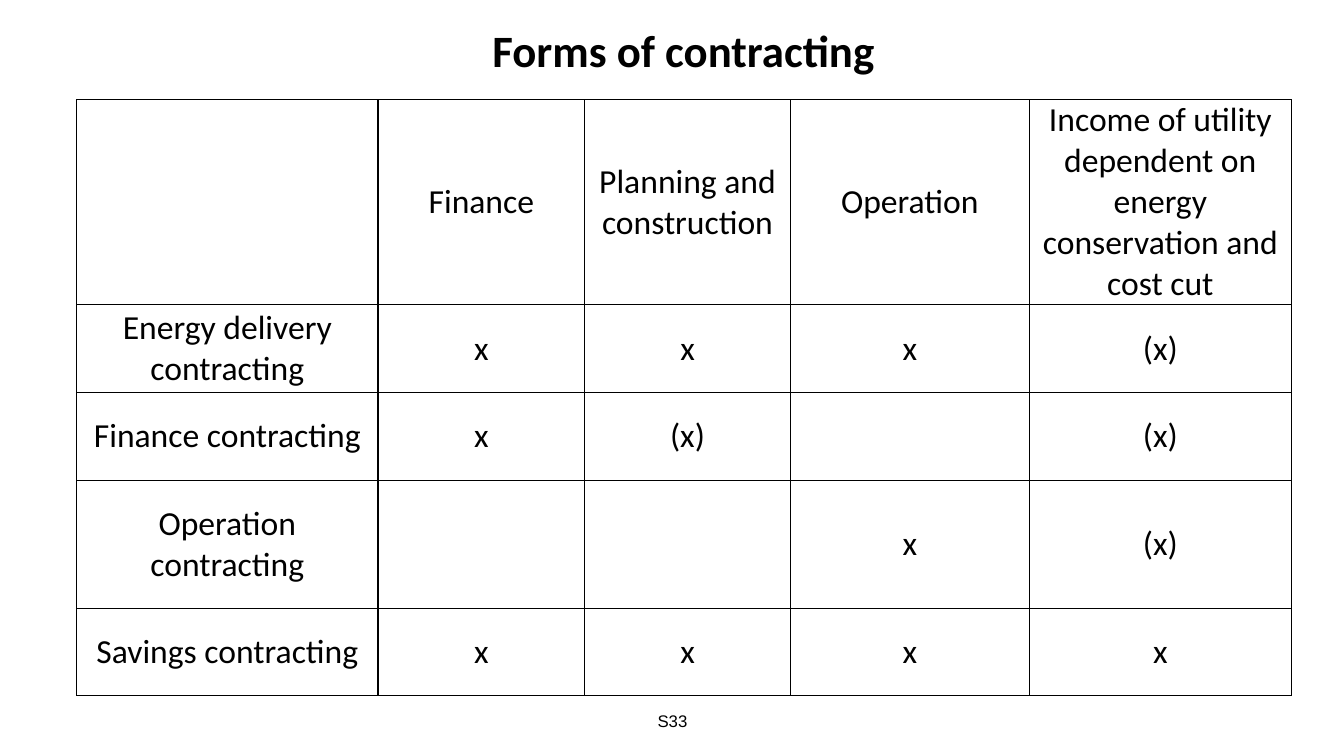
"""Build the slide that compares the forms of contracting in a table."""
from lxml import etree
from pptx import Presentation
from pptx.dml.color import RGBColor
from pptx.enum.text import MSO_ANCHOR, PP_ALIGN
from pptx.oxml.ns import qn
from pptx.util import Inches, Pt


def format_paragraph(paragraph, size, font_name, color="000000", bold=False):
    paragraph.alignment = PP_ALIGN.CENTER
    paragraph.font.size = Pt(size)
    paragraph.font.name = font_name
    paragraph.font.bold = bold
    paragraph.font.color.rgb = RGBColor.from_string(color)


def add_borders(cell, color="000000"):
    properties = cell._tc.get_or_add_tcPr()
    for position, side in enumerate(("a:lnL", "a:lnR", "a:lnT", "a:lnB")):
        line = etree.Element(qn(side), w=str(Pt(1)))
        fill = etree.SubElement(line, qn("a:solidFill"))
        etree.SubElement(fill, qn("a:srgbClr"), val=color)
        properties.insert(position, line)


presentation = Presentation()
presentation.slide_width = Inches(13.33)
presentation.slide_height = Inches(7.5)
slide = presentation.slides.add_slide(presentation.slide_layouts[5])

title = slide.shapes.title
title.left, title.top = Inches(4.42), Inches(0.18)
title.width, title.height = Inches(4.72), Inches(0.64)
title.text_frame.text = "Forms of contracting"
title.text_frame.vertical_anchor = MSO_ANCHOR.TOP
format_paragraph(title.text_frame.paragraphs[0], 32, "Calibri", bold=True)

rows = [
    ("", "Finance", "Planning and construction", "Operation",
     "Income of utility dependent on energy conservation and cost cut"),
    ("Energy delivery contracting", "x", "x", "x", "(x)"),
    ("Finance contracting", "x", "(x)", "", "(x)"),
    ("Operation contracting", "", "", "x", "(x)"),
    ("Savings contracting", "x", "x", "x", "x"),
]
column_widths = [2.99, 2.05, 2.04, 2.37, 2.6]
row_heights = [1.87, 0.87, 0.87, 1.27, 0.87]

table = slide.shapes.add_table(
    len(rows), len(column_widths), Inches(0.76), Inches(0.99),
    Inches(sum(column_widths)), Inches(sum(row_heights))).table
table.first_row = False
table.horz_banding = False
for column, width in zip(table.columns, column_widths):
    column.width = Inches(width)
for row, height, texts in zip(table.rows, row_heights, rows):
    row.height = Inches(height)
    for cell, text in zip(row.cells, texts):
        cell.text = text
        cell.fill.background()
        cell.vertical_anchor = MSO_ANCHOR.MIDDLE
        cell.margin_left = cell.margin_right = Inches(0.07)
        cell.margin_top = cell.margin_bottom = 0
        paragraph = cell.text_frame.paragraphs[0]
        paragraph.space_after = Pt(6)
        format_paragraph(paragraph, 24, "Calibri")
        add_borders(cell)

page_label = slide.shapes.add_textbox(
    Inches(4.56), Inches(6.95), Inches(4.22), Inches(0.4))
page_label.text_frame.word_wrap = True
page_label.text_frame.vertical_anchor = MSO_ANCHOR.MIDDLE
page_label.text_frame.text = "S33"
format_paragraph(page_label.text_frame.paragraphs[0], 12, "Arial")

presentation.save("out.pptx")
